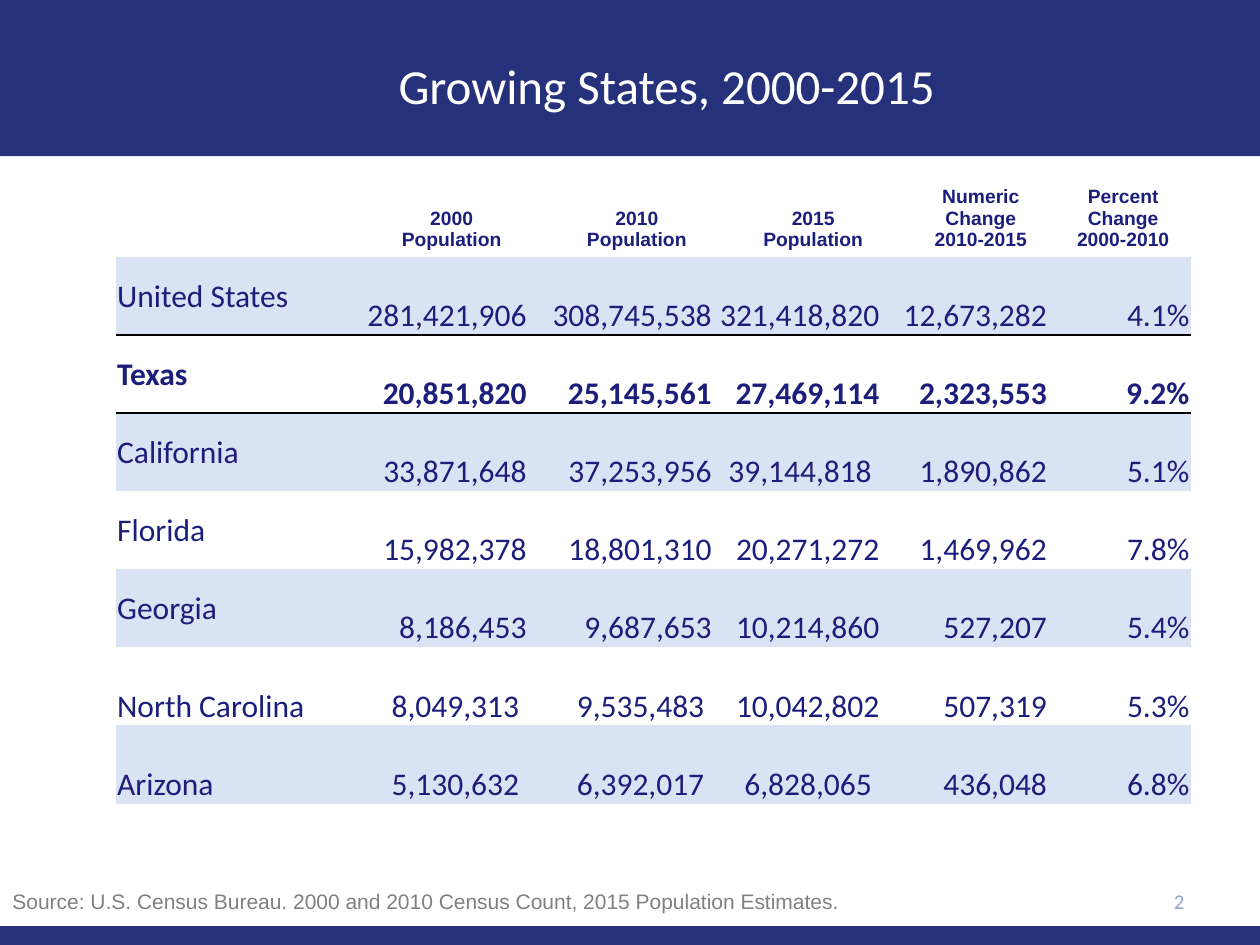
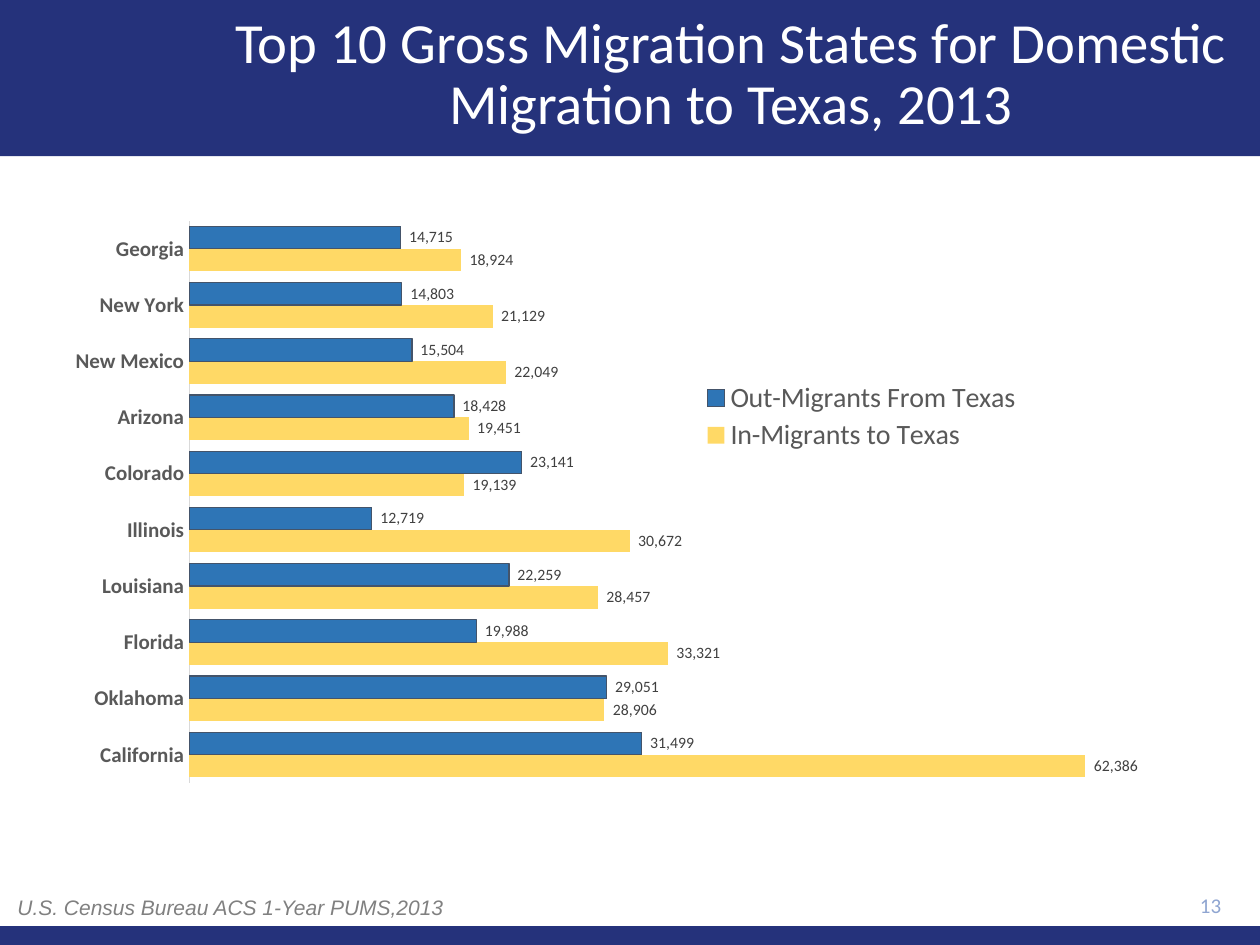
"""Build two slides on population growth and domestic migration in Texas."""
from dataclasses import dataclass

from lxml import etree
from pptx import Presentation
from pptx import util as u
from pptx.chart import data
from pptx.dml.color import RGBColor
from pptx.enum import chart as charts, shapes, text
from pptx.oxml import parse_xml
from pptx.oxml.ns import nsdecls, qn


@dataclass(frozen=True)
class Theme:
    band: str = "25327B"
    white: str = "FFFFFF"
    ink: str = "1B1E7A"
    stripe: str = "DAE3F3"
    black: str = "000000"
    source: str = "808080"
    number: str = "8FA5D1"
    label: str = "595959"
    value: str = "404040"
    axis: str = "D9D9D9"
    outline: str = "44546A"
    heading_font: str = "Calibri"
    note_font: str = "Arial"
    header_size: float = 11
    cell_size: float = 18
    note_size: float = 12
    legend_size: float = 16
    value_size: float = 9


THEME = Theme()
WIDTH, HEIGHT = 10, 7.5
BANDS = [(0, 0, WIDTH, 1.24), (0, 7.35, WIDTH, 0.15)]

GROWTH = {
    "title": ("Growing States, 2000-2015", 28, (1.25, 0.33, 8.08, 0.75)),
    "source": ("Source: U.S. Census Bureau. 2000 and 2010 Census Count, 2015 Population Estimates.",
               False, (0, 7, 8.75, 0.5)),
    "number": ("2", (7.17, 6.95, 2.33, 0.4)),
}
MIGRATION = {
    "title": ("Top 10 Gross Migration States for Domestic Migration to Texas, 2013",
              32.4, (1.7, 0.1, 8.2, 1)),
    "source": ("U.S. Census Bureau ACS 1-Year PUMS,2013", True, (0.04, 7.05, 5, 0.3)),
    "number": ("13", (8.9, 7.01, 0.89, 0.34)),
}

TABLE_LEFT, TABLE_TOP = 0.92, 1.35
COLUMN_WIDTHS = [1.8, 1.47, 1.47, 1.33, 1.33, 1.13]
HEADER_HEIGHT, ROW_HEIGHT = 0.69, 0.62
HEADERS = [[], ["2000", "Population"], ["2010", "Population"], ["2015 Population"],
           ["Numeric", "Change", "2010-2015"], ["Percent", "Change", "2000-2010"]]
HEADER_INDENTS = [0, 0.26, 0.26, 0.26, 0.26, 0.06]
STATES = [
    ("United States", "281,421,906", "308,745,538", "321,418,820", "12,673,282", "4.1%"),
    ("Texas", "20,851,820", "25,145,561", "27,469,114", "2,323,553", "9.2%"),
    ("California", "33,871,648", "37,253,956", "39,144,818", "1,890,862", "5.1%"),
    ("Florida", "15,982,378", "18,801,310", "20,271,272", "1,469,962", "7.8%"),
    ("Georgia", "8,186,453", "9,687,653", "10,214,860", "527,207", "5.4%"),
    ("North Carolina", "8,049,313", "9,535,483", "10,042,802", "507,319", "5.3%"),
    ("Arizona", "5,130,632", "6,392,017", "6,828,065", "436,048", "6.8%"),
]
SET_IN_VALUES = {"39,144,818", "8,049,313", "9,535,483", "5,130,632", "6,392,017", "6,828,065"}
LOW_NAMES = {"North Carolina", "Arizona"}
PLAIN_TABLE_STYLE = "{2D5ABB26-0587-4C30-8999-92F81FD0307C}"

CHART_BOX = (0.41, 1.65, 9.25, 5.1)
PLOT_SHARES = {"x": 0.118, "y": 0.02, "w": 0.863, "h": 0.875}
LEGEND_SHARES = {"x": 0.545, "y": 0.265, "w": 0.3, "h": 0.12}
VALUE_FORMAT = '_(* #,##0_);_(* \\(#,##0\\);_(* "-"??_);_('
MIGRANTS = [
    ("California", 62386, 31499), ("Oklahoma", 28906, 29051), ("Florida", 33321, 19988),
    ("Louisiana", 28457, 22259), ("Illinois", 30672, 12719), ("Colorado", 19139, 23141),
    ("Arizona", 19451, 18428), ("New Mexico", 22049, 15504), ("New York", 21129, 14803),
    ("Georgia", 18924, 14715),
]
FLOWS = [("In-Migrants to Texas", "FFD966", None),
         ("Out-Migrants From Texas", "2E75B6", THEME.outline)]


def inches(box):
    return [u.Inches(length) for length in box]


def paint(fill, color):
    fill.solid()
    fill.fore_color.rgb = RGBColor.from_string(color)


def set_font(font, name, size, color, bold=False, italic=False):
    font.name, font.size = name, u.Pt(size)
    font.bold, font.italic = bold, italic
    font.color.rgb = RGBColor.from_string(color)


def add_run(paragraph, words, *style, **flags):
    run = paragraph.add_run()
    run.text = words
    set_font(run.font, *style, **flags)


def add_text(slide, box, words, align, anchor, *style, **flags):
    frame = slide.shapes.add_textbox(*inches(box)).text_frame
    frame.word_wrap, frame.vertical_anchor = True, anchor
    frame.paragraphs[0].alignment = align
    add_run(frame.paragraphs[0], words, *style, **flags)


def add_bands(slide):
    layout_tree = slide.slide_layout.shapes.element
    for index, box in enumerate(BANDS):
        band = slide.shapes.add_shape(shapes.MSO_SHAPE.RECTANGLE, *inches(box))
        band.name = f"Band {index + 1}"
        band.shadow.inherit = False
        paint(band.fill, THEME.band)
        band.line.fill.background()
        band.element.nvSpPr.cNvPr.set("id", str(90 + index))
        layout_tree.insert(2 + index, band.element)


def add_slide(presentation, layout, content):
    slide = presentation.slides.add_slide(layout)
    words, size, box = content["title"]
    title = slide.shapes.title
    title.left, title.top, title.width, title.height = inches(box)
    frame = title.text_frame
    frame.word_wrap, frame.auto_size = True, text.MSO_AUTO_SIZE.NONE
    frame.vertical_anchor = text.MSO_ANCHOR.MIDDLE
    paragraph = frame.paragraphs[0]
    paragraph.alignment, paragraph.line_spacing = text.PP_ALIGN.CENTER, 0.9
    add_run(paragraph, words, THEME.heading_font, size, THEME.white)
    words, box = content["number"]
    add_text(slide, box, words, text.PP_ALIGN.RIGHT, text.MSO_ANCHOR.MIDDLE,
             THEME.heading_font, THEME.note_size, THEME.number)
    words, italic, box = content["source"]
    add_text(slide, box, words, text.PP_ALIGN.LEFT, text.MSO_ANCHOR.TOP,
             THEME.note_font, THEME.note_size, THEME.source, italic=italic)
    return slide


def add_border(cell, side):
    line = parse_xml(f'<a:{side} {nsdecls("a")} w="{u.Pt(1.5)}"><a:solidFill>'
                     f'<a:srgbClr val="{THEME.black}"/></a:solidFill></a:{side}>')
    cell._tc.get_or_add_tcPr().insert(0, line)


def fill_header(cell, lines, indent):
    cell.vertical_anchor = text.MSO_ANCHOR.BOTTOM
    cell.fill.background()
    for index, words in enumerate(lines):
        frame = cell.text_frame
        paragraph = frame.add_paragraph() if index else frame.paragraphs[0]
        paragraph.alignment = text.PP_ALIGN.CENTER
        paragraph._p.get_or_add_pPr().set("marL", str(u.Inches(indent)))
        add_run(paragraph, words, THEME.note_font, THEME.header_size, THEME.ink, bold=True)


def fill_cell(cell, words, is_name, bold, striped):
    raised = is_name and words not in LOW_NAMES
    cell.vertical_anchor = text.MSO_ANCHOR.MIDDLE if raised else text.MSO_ANCHOR.BOTTOM
    cell.margin_left = cell.margin_top = u.Inches(0.01)
    cell.margin_right = u.Inches(0.07 if words in SET_IN_VALUES else 0.01)
    cell.margin_bottom = 0
    if striped:
        paint(cell.fill, THEME.stripe)
    else:
        cell.fill.background()
    paragraph = cell.text_frame.paragraphs[0]
    paragraph.alignment = text.PP_ALIGN.LEFT if is_name else text.PP_ALIGN.RIGHT
    add_run(paragraph, words, THEME.heading_font, THEME.cell_size, THEME.ink, bold=bold)


def add_growth_table(slide):
    heights = [HEADER_HEIGHT] + [ROW_HEIGHT] * len(STATES)
    box = (TABLE_LEFT, TABLE_TOP, sum(COLUMN_WIDTHS), sum(heights))
    frame = slide.shapes.add_table(len(heights), len(COLUMN_WIDTHS), *inches(box))
    table = frame.table
    table.first_row = table.horz_banding = False
    next(frame.element.iter(qn("a:tableStyleId"))).text = PLAIN_TABLE_STYLE
    for column, width in zip(table.columns, COLUMN_WIDTHS):
        column.width = u.Inches(width)
    for row, height in zip(table.rows, heights):
        row.height = u.Inches(height)
    for cell, lines, indent in zip(table.rows[0].cells, HEADERS, HEADER_INDENTS):
        fill_header(cell, lines, indent)
    for index, state in enumerate(STATES):
        for column, words in enumerate(state):
            cell = table.cell(index + 1, column)
            fill_cell(cell, words, column == 0, state[0] == "Texas", index % 2 == 0)
            if index < 2:
                add_border(cell, ("lnB", "lnT")[index])


def set_layout(element, shares, inner=False):
    for old in element.findall(qn("c:layout")):
        element.remove(old)
    layout = etree.Element(qn("c:layout"))
    manual = etree.SubElement(layout, qn("c:manualLayout"))
    settings = {"layoutTarget": "inner"} if inner else {}
    settings.update(xMode="edge", yMode="edge", **shares)
    for name, value in settings.items():
        etree.SubElement(manual, qn(f"c:{name}")).set("val", str(value))
    if inner:
        element.insert(0, layout)
    else:
        element.find(qn("c:legendPos")).addnext(layout)


def style_axes(chart):
    states, values = chart.category_axis, chart.value_axis
    states.major_tick_mark = states.minor_tick_mark = charts.XL_TICK_MARK.NONE
    states.has_major_gridlines = values.has_major_gridlines = False
    set_font(states.tick_labels.font, THEME.heading_font, THEME.note_size, THEME.label, bold=True)
    paint(states.format.line.fill, THEME.axis)
    states.format.line.width = u.Pt(0.75)
    values.minimum_scale, values.maximum_scale = 0, 70000
    values.visible = False


def style_series(series, color, outline):
    series.invert_if_negative = False
    paint(series.format.fill, color)
    if outline:
        paint(series.format.line.fill, outline)
        series.format.line.width = u.Pt(0.75)
    else:
        series.format.line.fill.background()
    labels = series.data_labels
    labels.show_value = True
    labels.number_format, labels.number_format_is_linked = VALUE_FORMAT, False
    labels.position = charts.XL_LABEL_POSITION.OUTSIDE_END
    set_font(labels.font, THEME.heading_font, THEME.value_size, THEME.value)


def add_migration_chart(slide):
    states, *counts = zip(*MIGRANTS)
    chart_data = data.CategoryChartData(number_format=VALUE_FORMAT)
    chart_data.categories = states
    for (name, _, _), values in zip(FLOWS, counts):
        chart_data.add_series(name, values)
    chart = slide.shapes.add_chart(charts.XL_CHART_TYPE.BAR_CLUSTERED,
                                   *inches(CHART_BOX), chart_data).chart
    chart.has_title = False
    set_font(chart.font, THEME.heading_font, 10, THEME.black)
    style_axes(chart)
    plot = chart.plots[0]
    plot.gap_width, plot.overlap, plot.vary_by_categories = 50, 0, False
    for series, (_, color, outline) in zip(plot.series, FLOWS):
        style_series(series, color, outline)
    chart.has_legend = True
    chart.legend.position = charts.XL_LEGEND_POSITION.BOTTOM
    chart.legend.include_in_layout = False
    set_font(chart.legend.font, THEME.heading_font, THEME.legend_size, THEME.label)
    set_layout(next(chart.element.iter(qn("c:plotArea"))), PLOT_SHARES, inner=True)
    set_layout(next(chart.element.iter(qn("c:legend"))), LEGEND_SHARES)


def main():
    presentation = Presentation()
    presentation.slide_width, presentation.slide_height = inches((WIDTH, HEIGHT))
    layout = presentation.slide_layouts.get_by_name("Title Only")
    growth = add_slide(presentation, layout, GROWTH)
    add_bands(growth)
    add_growth_table(growth)
    add_migration_chart(add_slide(presentation, layout, MIGRATION))
    presentation.save("out.pptx")


if __name__ == "__main__":
    main()
